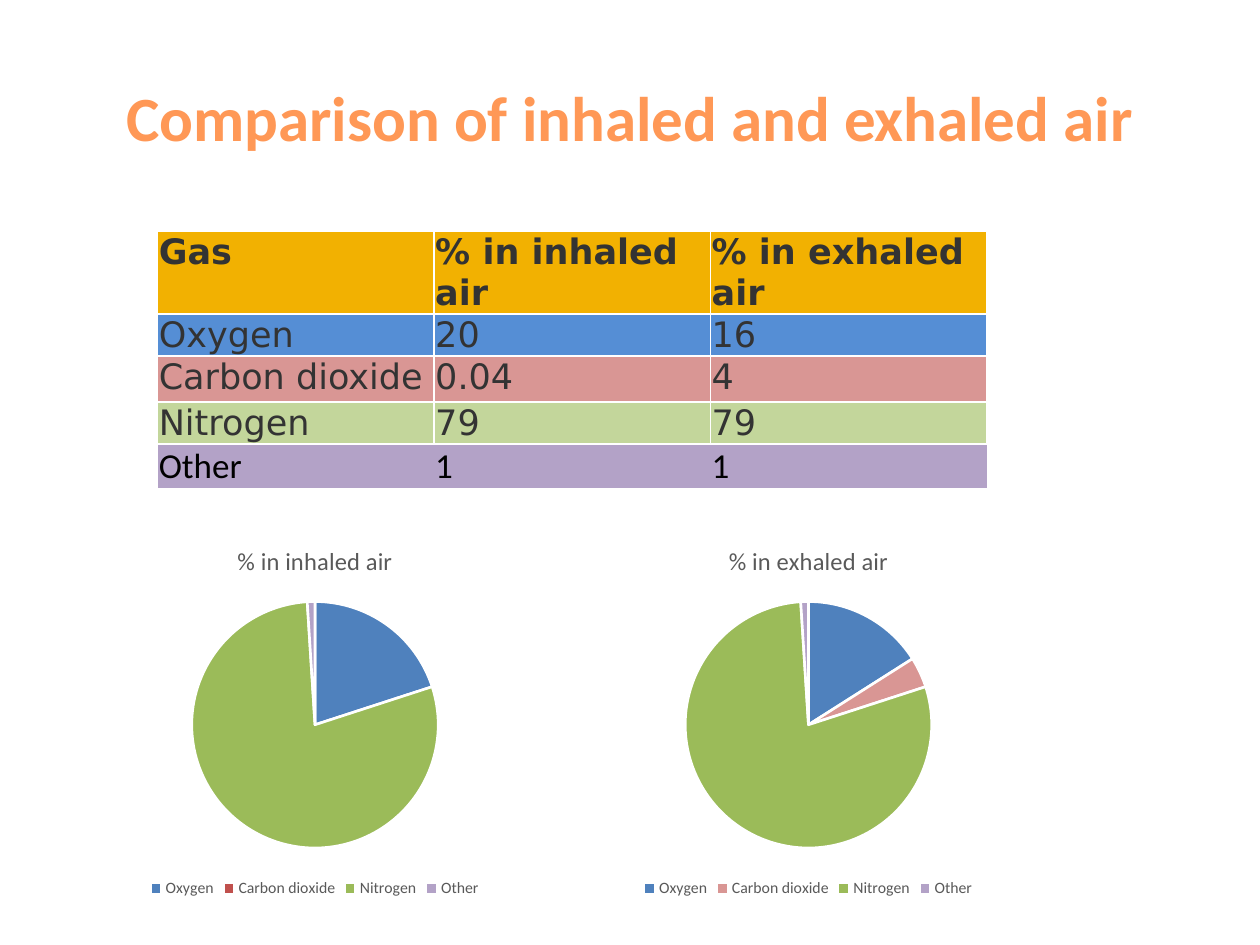
import pptx
import pptx.chart.data
import pptx.dml.color
import pptx.enum.chart
import pptx.enum.text
import pptx.oxml
import pptx.oxml.ns
import pptx.util

Pt = pptx.util.Pt
ANCHOR = pptx.enum.text.MSO_ANCHOR

COLORS = {
    "title": "FF9856", "dark": "333333", "black": "000000", "muted": "595959", "white": "FFFFFF",
    "header": "F2B101", "oxygen": "558ED5", "dioxide": "D99694", "nitrogen": "C3D69B", "other": "B3A2C7",
    "oxygen_slice": "4F81BD", "dioxide_slice": "C0504D", "nitrogen_slice": "9BBB59",
}
HEADING = "Comparison of inhaled and exhaled air"
GAS_ROWS = [
    (("Gas", "% in inhaled air", "% in exhaled air"), "header", 46.8),
    (("Oxygen", "20", "16"), "oxygen", 24),
    (("Carbon dioxide", "0.04", "4"), "dioxide", 26.4),
    (("Nitrogen", "79", "79"), "nitrogen", 24),
    (("Other", "1", "1"), "other", 25.2),
]
GASES = ("Oxygen", "Carbon dioxide", "Nitrogen", "Other")
PIES = [
    ("% in inhaled air", (20, 0, 79, 1), 0, "dioxide_slice"),
    ("% in exhaled air", (16, 4, 79, 1), 282, "dioxide"),
]
TABLE_LEFT, TABLE_TOP, COLUMN_WIDTH = 90, 132, 158
PIE_TOP, PIE_WIDTH, PIE_HEIGHT = 300, 360, 216


def rgb(name):
    return pptx.dml.color.RGBColor.from_string(COLORS[name])


def style_font(font, size, color, bold=False, face="Calibri"):
    font.size, font.bold, font.name = Pt(size), bold, face
    font.color.rgb = rgb(color)


def write(frame, text, align=None, **style):
    paragraph = frame.paragraphs[0]
    paragraph.alignment = align
    run = paragraph.add_run()
    run.text = text
    style_font(run.font, **style)


def set_borders(cell, visible_sides):
    properties = cell._tc.get_or_add_tcPr()
    for side in ("L", "R", "T", "B"):
        paint = "<a:noFill/>"
        if side in visible_sides:
            paint = f'<a:solidFill><a:srgbClr val="{COLORS["white"]}"/></a:solidFill>'
        properties.append(pptx.oxml.parse_xml(
            f'<a:ln{side} {pptx.oxml.ns.nsdecls("a")} w="{Pt(1)}">{paint}</a:ln{side}>'))


def add_gas_table(slide):
    columns = len(GAS_ROWS[0][0])
    height = sum(row[2] for row in GAS_ROWS)
    table = slide.shapes.add_table(
        len(GAS_ROWS), columns, Pt(TABLE_LEFT), Pt(TABLE_TOP), Pt(COLUMN_WIDTH * columns), Pt(height)).table
    for row_index, (texts, fill, row_height) in enumerate(GAS_ROWS):
        table.rows[row_index].height = Pt(row_height)
        is_header, is_last = row_index == 0, row_index == len(GAS_ROWS) - 1
        for column, text in enumerate(texts):
            cell = table.cell(row_index, column)
            cell.margin_left = cell.margin_right = cell.margin_top = Pt(0.75)
            cell.margin_bottom = 0
            cell.vertical_anchor = ANCHOR.BOTTOM if is_last else ANCHOR.TOP
            set_borders(cell, "T" if is_last else "LRTB")
            cell.fill.solid()
            cell.fill.fore_color.rgb = rgb(fill)
            write(cell.text_frame, text, size=20, bold=is_header,
                  color="black" if is_last else "dark", face="Calibri" if is_last else "DejaVu Sans")


def add_pie(slide, name, shares, left, dioxide_color):
    air = pptx.chart.data.CategoryChartData()
    air.categories = GASES
    air.add_series(name, shares)
    pie = slide.shapes.add_chart(
        pptx.enum.chart.XL_CHART_TYPE.PIE, Pt(left), Pt(PIE_TOP), Pt(PIE_WIDTH), Pt(PIE_HEIGHT), air).chart
    style_font(pie.font, size=10, color="black")
    pie.has_title = True
    write(pie.chart_title.text_frame, name, size=14, color="muted")
    pie.chart_title.include_in_layout = False
    pie.has_legend = True
    pie.legend.position = pptx.enum.chart.XL_LEGEND_POSITION.BOTTOM
    pie.legend.include_in_layout = False
    style_font(pie.legend.font, size=9, color="muted")
    pie.plots[0].vary_by_categories = True
    slices = pie.plots[0].series[0].points
    for index, color in enumerate(("oxygen_slice", dioxide_color, "nitrogen_slice", "other")):
        share = slices[index].format
        share.fill.solid()
        share.fill.fore_color.rgb = rgb(color)
        share.line.color.rgb = rgb("white")
        share.line.width = Pt(1.5)


def main():
    deck = pptx.Presentation()
    deck.slide_width, deck.slide_height = Pt(720), Pt(540)
    slide = deck.slides.add_slide(deck.slide_layouts[5])
    heading = slide.shapes.title
    heading.left, heading.top, heading.width, heading.height = Pt(36), Pt(21.6), Pt(648), Pt(90)
    heading.text_frame.vertical_anchor = ANCHOR.MIDDLE
    write(heading.text_frame, HEADING, align=pptx.enum.text.PP_ALIGN.CENTER, size=36, color="title", bold=True)
    for pie in PIES:
        add_pie(slide, *pie)
    add_gas_table(slide)
    deck.save("out.pptx")


if __name__ == "__main__":
    main()
